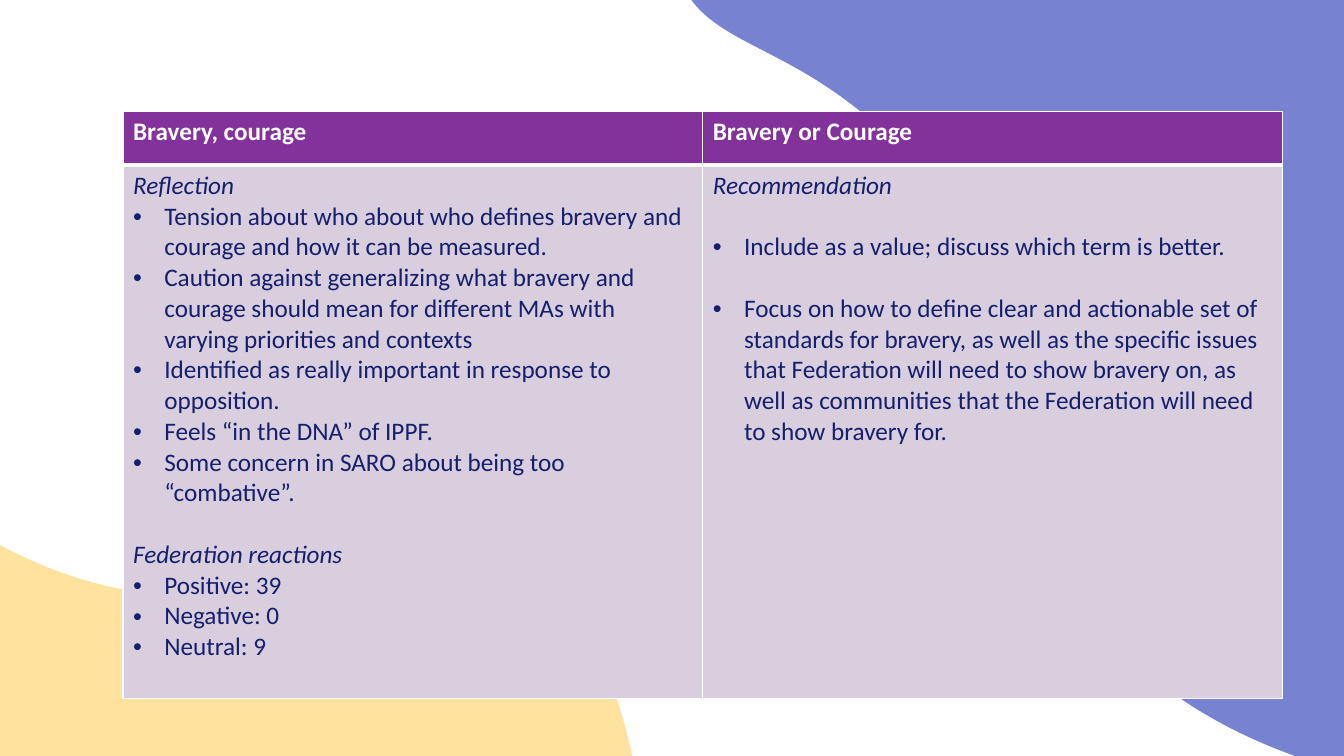
"""Build the bravery and courage slide: two colour waves behind a table."""
import math

from lxml import etree
from pptx import Presentation
from pptx.dml.color import RGBColor
from pptx.enum import text
from pptx.oxml import ns
from pptx.util import Inches, Pt

WHITE = RGBColor(0xFF, 0xFF, 0xFF)
NAVY = RGBColor(0x15, 0x1F, 0x6D)
PURPLE = RGBColor(0x84, 0x32, 0x9B)
LILAC = RGBColor(0xD9, 0xCE, 0xDE)
YELLOW = RGBColor(0xFF, 0xE2, 0x9E)
BLUE = RGBColor(0x77, 0x82, 0xD1)

HEADER = {"bold": True, "color": WHITE}
LABEL = {"italic": True}
BULLET = {"bullet": True}
COUNT = {"bullet": True, "align": text.PP_ALIGN.JUSTIFY}
GAP = {"before": 22}

HEADINGS = [
    [("Bravery, courage", HEADER)],
    [("Bravery or Courage", HEADER)],
]
BODIES = [
    [
        ("Reflection", LABEL),
        ("Tension about who about who defines bravery and courage and how it "
         "can be measured.", BULLET),
        ("Caution against generalizing what bravery and courage should mean "
         "for different MAs with varying priorities and contexts", BULLET),
        ("Identified as really important in response to opposition.", BULLET),
        ("Feels “in the DNA” of IPPF.", BULLET),
        ("Some concern in SARO about being too “combative”.", BULLET),
        ("Federation reactions", LABEL | GAP),
        ("Positive: 39", COUNT),
        ("Negative: 0", COUNT),
        ("Neutral: 9", COUNT),
    ],
    [
        ("Recommendation", LABEL),
        ("Include as a value; discuss which term is better.", BULLET | GAP),
        ("Focus on how to define clear and actionable set of standards for "
         "bravery, as well as the specific issues that Federation will need "
         "to show bravery on, as well as communities that the Federation "
         "will need to show bravery for.", BULLET | GAP),
    ],
]
ROWS = [(0.53, PURPLE, 3, HEADINGS), (5.29, LILAC, 1, BODIES)]
COLUMN_WIDTH = 5.75

WAVES = [
    (YELLOW, (-8.36, 3.82, 14.73, 8.22), 0, (5.15, 5.58), [
        (6.61, 6.41, 6.95, 10.23, 5.15, 11.55),
        (3.73, 12.58, 1.5, 11.71, 1.08, 11.55),
        (-0.37, 10.99, -0.29, 10.36, -1.36, 10.11),
        (-3.38, 9.65, -4.46, 11.68, -6.16, 11.22),
        (-7.42, 10.87, -8.34, 9.35, -8.36, 8.05),
        (-8.38, 5.75, -5.6, 3.77, -3.39, 3.82),
        (-1.19, 3.88, -0.59, 5.91, 2.07, 5.93),
        (3.77, 5.94, 4.33, 5.12, 5.15, 5.58),
    ]),
    (BLUE, (5.44, -1.62, 13.56, 7.57), 225.3, (6.7, -0.33), [
        (6.3, -1.82, 8.58, -4.51, 10.61, -4.19),
        (12.2, -3.93, 13.08, -1.9, 13.24, -1.52),
        (13.81, -0.21, 13.35, 0.14, 13.88, 1.01),
        (14.89, 2.63, 16.91, 2.01, 17.71, 3.43),
        (18.3, 4.47, 17.9, 6.06, 17.06, 6.91),
        (15.57, 8.42, 12.48, 7.88, 11.08, 6.4),
        (9.69, 4.93, 10.63, 3.22, 8.92, 1.46),
        (7.83, 0.34, 6.93, 0.51, 6.7, -0.33),
    ]),
]


def add_wave(page, color, frame, angle, start, curves):
    left, top, width, height = frame
    right, bottom = left + width, top + height
    builder = page.shapes.build_freeform(Inches(left), Inches(top))
    builder.add_line_segments([
        (Inches(x), Inches(y))
        for x, y in ((right, top), (right, bottom), (left, bottom))])
    wave = builder.convert_to_shape()
    turn = math.radians(-angle)
    outline = wave._element.find(".//" + ns.qn("a:path"))
    for child in list(outline):
        outline.remove(child)

    def add_step(tag, values):
        step = etree.SubElement(outline, ns.qn(tag))
        for x, y in zip(values[::2], values[1::2]):
            dx, dy = x - left - width / 2, y - top - height / 2
            local_x = dx * math.cos(turn) - dy * math.sin(turn) + width / 2
            local_y = dx * math.sin(turn) + dy * math.cos(turn) + height / 2
            etree.SubElement(step, ns.qn("a:pt"), x=str(Inches(local_x)),
                             y=str(Inches(local_y)))

    add_step("a:moveTo", start)
    for curve in curves:
        add_step("a:cubicBezTo", curve)
    etree.SubElement(outline, ns.qn("a:close"))
    wave.rotation = angle
    wave.shadow.inherit = False
    wave.fill.solid()
    wave.fill.fore_color.rgb = color
    wave.line.fill.background()


def write(para, words, bold=False, italic=False, color=NAVY, bullet=False,
          align=text.PP_ALIGN.LEFT, before=0):
    para.alignment = align
    para.space_before = Pt(before)
    if bullet:
        props = para._p.get_or_add_pPr()
        props.set("marL", str(Inches(0.31)))
        props.set("indent", str(-Inches(0.31)))
        etree.SubElement(props, ns.qn("a:buFont"), typeface="Arial")
        etree.SubElement(props, ns.qn("a:buChar"), char="•")
    span = para.add_run()
    span.text = words
    font = span.font
    font.name, font.size = "Calibri", Pt(18)
    font.bold, font.italic = bold, italic
    font.color.rgb = color


def add_borders(cell, bottom):
    props = cell._tc.get_or_add_tcPr()
    for side, width in (("L", 1), ("R", 1), ("T", 1), ("B", bottom)):
        line = etree.SubElement(props, ns.qn("a:ln" + side), w=str(Pt(width)))
        fill = etree.SubElement(line, ns.qn("a:solidFill"))
        etree.SubElement(fill, ns.qn("a:srgbClr"), val=str(WHITE))


def add_comparison(page):
    height = sum(row[0] for row in ROWS)
    table = page.shapes.add_table(
        len(ROWS), len(BODIES), Inches(1.22), Inches(1.11),
        Inches(COLUMN_WIDTH * len(BODIES)), Inches(height)).table
    table.horz_banding = False
    for r, (row_height, color, bottom, contents) in enumerate(ROWS):
        table.rows[r].height = Inches(row_height)
        for c, lines in enumerate(contents):
            cell = table.cell(r, c)
            add_borders(cell, bottom)
            cell.fill.solid()
            cell.fill.fore_color.rgb = color
            frame = cell.text_frame
            for i, (words, style) in enumerate(lines):
                para = frame.add_paragraph() if i else frame.paragraphs[0]
                write(para, words, **style)


def main():
    deck = Presentation()
    deck.slide_width, deck.slide_height = Inches(13.33), Inches(7.5)
    page = deck.slides.add_slide(deck.slide_layouts[6])
    for wave in WAVES:
        add_wave(page, *wave)
    add_comparison(page)
    deck.save("out.pptx")


if __name__ == "__main__":
    main()
